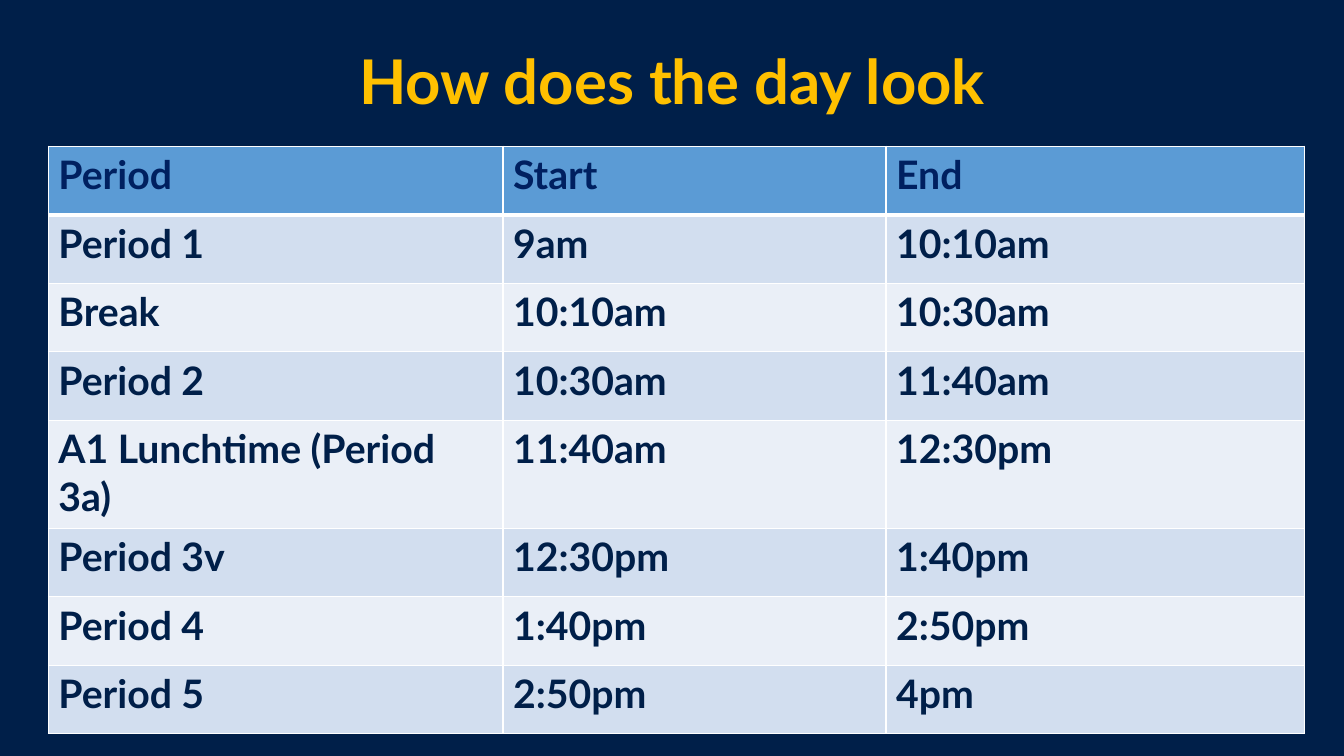
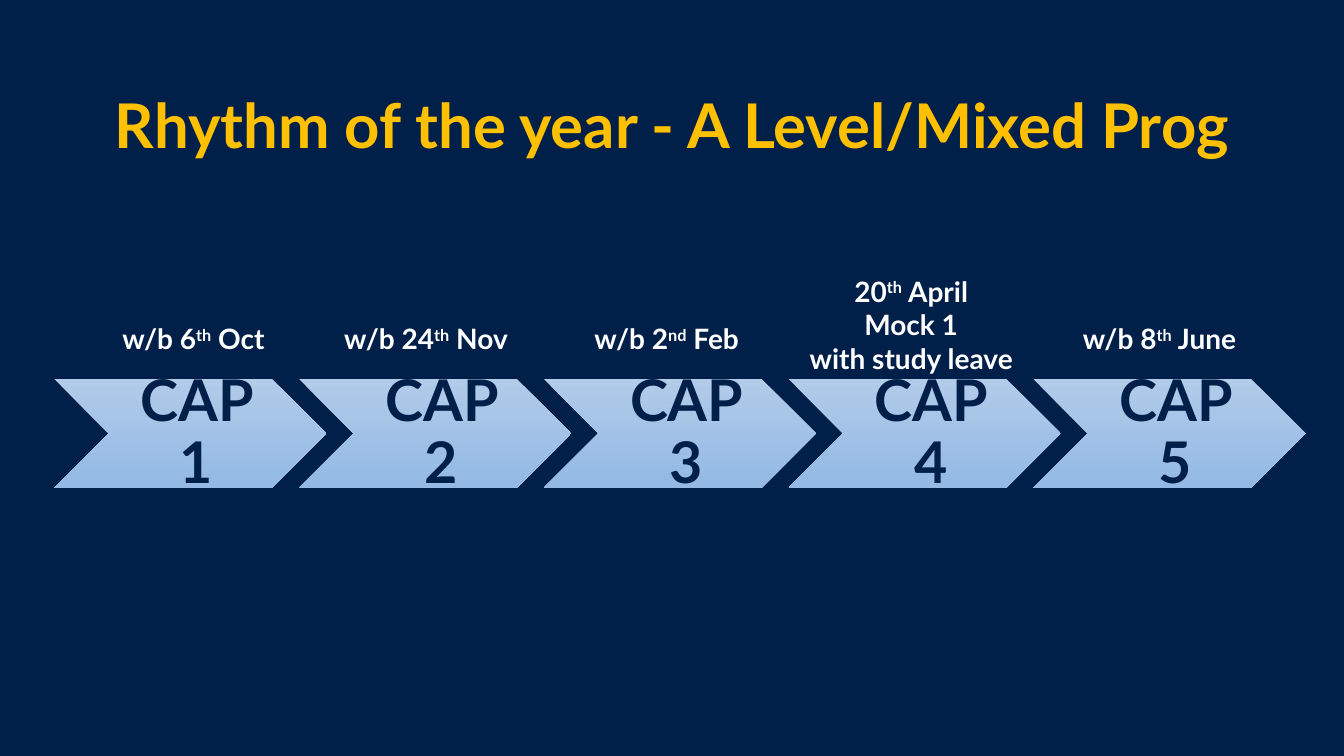
from dataclasses import dataclass
from typing import NamedTuple

from lxml.etree import SubElement
from pptx import Presentation
from pptx.dml.color import RGBColor
from pptx.enum.shapes import MSO_SHAPE
from pptx.enum.text import MSO_ANCHOR, PP_ALIGN
from pptx.oxml.ns import qn
from pptx.slide import Slide
from pptx.table import _Cell
from pptx.text.text import TextFrame, _Paragraph
from pptx.util import Inches, Length, Pt

WIDTH, HEIGHT = Inches(13.33), Inches(7.5)
FONT = "Lato"
NAVY = RGBColor(0x00, 0x1F, 0x49)
HEADER_TEXT = RGBColor(0x00, 0x20, 0x60)
GOLD = RGBColor(0xFF, 0xC0, 0x00)
WHITE = RGBColor(0xFF, 0xFF, 0xFF)
HEADER_BLUE = RGBColor(0x5B, 0x9B, 0xD5)
BANDS = (RGBColor(0xD2, 0xDE, 0xEF), RGBColor(0xEA, 0xEF, 0xF7))
CHEVRON_TOP = RGBColor(0xB1, 0xCB, 0xE9)
CHEVRON_BOTTOM = RGBColor(0x93, 0xB9, 0xE4)

TIMETABLE = (
    ("Period", "Start", "End"),
    ("Period 1", "9am", "10:10am"),
    ("Break", "10:10am", "10:30am"),
    ("Period 2", "10:30am", "11:40am"),
    ("A1 Lunchtime (Period 3a)", "11:40am", "12:30pm"),
    ("Period 3v", "12:30pm", "1:40pm"),
    ("Period 4", "1:40pm", "2:50pm"),
    ("Period 5", "2:50pm", "4pm"),
)
COLUMN_SHARES = (33.83, 28.5, 31.13)
ROW_SHARE, TALL_ROW_SHARE, TALL_ROW = 9.07, 14.27, 4


class Box(NamedTuple):
    """Left, top, width and height in percent of the slide."""

    left: float
    top: float
    width: float
    height: float

    def lengths(self) -> tuple[Length, Length, Length, Length]:
        return (across(self.left), down(self.top),
                across(self.width), down(self.height))


@dataclass(frozen=True)
class Milestone:
    name: str
    center: float
    day: str
    ordinal: str
    month: str
    details: tuple[str, ...] = ()


MILESTONES = (
    Milestone("CAP 1", 14.4, "w/b 6", "th", " Oct"),
    Milestone("CAP 2", 31.7, "w/b 24", "th", " Nov"),
    Milestone("CAP 3", 49.6, "w/b 2", "nd", " Feb"),
    Milestone("CAP 4", 67.8, "20", "th", " April", ("Mock 1", "with study leave")),
    Milestone("CAP 5", 86.27, "w/b 8", "th", " June"),
)
FIRST_CHEVRON = Box(4.05, 50.13, 20.25, 14.4)
CHEVRON_PITCH = 18.21
LABEL_WIDTH = 17.33


def across(percent: float) -> Length:
    return Length(round(WIDTH * percent / 100))


def down(percent: float) -> Length:
    return Length(round(HEIGHT * percent / 100))


def add_run(paragraph: _Paragraph, text: str, size: float, color: RGBColor,
            raised: bool = False) -> None:
    run = paragraph.add_run()
    run.text = text
    run.font.name = FONT
    run.font.size = Pt(size)
    run.font.bold = True
    run.font.color.rgb = color
    if raised:
        run.font._element.set("baseline", "30000")


def centered_paragraph(frame: TextFrame, first: bool = True) -> _Paragraph:
    paragraph = frame.paragraphs[0] if first else frame.add_paragraph()
    paragraph.alignment = PP_ALIGN.CENTER
    return paragraph


def add_text_frame(slide: Slide, box: Box) -> TextFrame:
    frame = slide.shapes.add_textbox(*box.lengths()).text_frame
    frame.word_wrap = True
    return frame


def add_titled_slide(presentation: Presentation, title: str, top: float,
                     height: float) -> Slide:
    slide = presentation.slides.add_slide(presentation.slide_layouts[6])
    slide.background.fill.solid()
    slide.background.fill.fore_color.rgb = NAVY
    frame = add_text_frame(slide, Box(6.9, top, 86.25, height))
    frame.vertical_anchor = MSO_ANCHOR.MIDDLE
    paragraph = centered_paragraph(frame)
    paragraph.line_spacing = 0.9
    add_run(paragraph, title, 44, GOLD)
    return slide


def set_borders(cell: _Cell, top: float, bottom: float) -> None:
    properties = cell._tc.get_or_add_tcPr()
    for side, points in (("L", 1), ("R", 1), ("T", top), ("B", bottom)):
        line = SubElement(properties, qn(f"a:ln{side}"), w=str(Pt(points)))
        fill = SubElement(line, qn("a:solidFill"))
        SubElement(fill, qn("a:srgbClr"), val=str(WHITE))


def add_timetable(slide: Slide) -> None:
    heights = [TALL_ROW_SHARE if row == TALL_ROW else ROW_SHARE
               for row in range(len(TIMETABLE))]
    box = Box(3.6, 19.33, sum(COLUMN_SHARES), sum(heights))
    table = slide.shapes.add_table(
        len(TIMETABLE), len(COLUMN_SHARES), *box.lengths()).table
    for column, share in zip(table.columns, COLUMN_SHARES):
        column.width = across(share)
    for index, (row, height, texts) in enumerate(
            zip(table.rows, heights, TIMETABLE)):
        row.height = down(height)
        header = index == 0
        for cell, text in zip(row.cells, texts):
            set_borders(cell, 3 if index == 1 else 1, 3 if header else 1)
            cell.fill.solid()
            cell.fill.fore_color.rgb = (
                HEADER_BLUE if header else BANDS[(index - 1) % 2])
            add_run(cell.text_frame.paragraphs[0], text, 28,
                    HEADER_TEXT if header else NAVY)


def add_chevron(slide: Slide, name: str, box: Box) -> None:
    chevron = slide.shapes.add_shape(MSO_SHAPE.CHEVRON, *box.lengths())
    chevron.shadow.inherit = False
    chevron.line.fill.background()
    chevron.fill.gradient()
    chevron.fill.gradient_angle = 270
    for stop, color in zip(chevron.fill.gradient_stops,
                           (CHEVRON_TOP, CHEVRON_BOTTOM)):
        stop.color.rgb = color
    first, last = chevron.fill.gradient_stops
    first.position, last.position = 0, 1
    frame = chevron.text_frame
    frame.word_wrap = True
    frame.vertical_anchor = MSO_ANCHOR.MIDDLE
    frame.margin_left = Inches(0.18)
    frame.margin_top = frame.margin_right = frame.margin_bottom = Inches(0.06)
    paragraph = centered_paragraph(frame)
    paragraph.line_spacing = 0.9
    add_run(paragraph, name, 41, NAVY)


def add_date_label(slide: Slide, milestone: Milestone) -> None:
    top, height = (35.6, 14.8) if milestone.details else (41.87, 5.87)
    left = milestone.center - LABEL_WIDTH / 2
    frame = add_text_frame(slide, Box(left, top, LABEL_WIDTH, height))
    paragraph = centered_paragraph(frame)
    add_run(paragraph, milestone.day, 20, WHITE)
    add_run(paragraph, milestone.ordinal, 20, WHITE, raised=True)
    add_run(paragraph, milestone.month, 20, WHITE)
    for detail in milestone.details:
        add_run(centered_paragraph(frame, first=False), detail, 20, WHITE)


def add_year_rhythm(slide: Slide) -> None:
    for index, milestone in enumerate(MILESTONES):
        left = FIRST_CHEVRON.left + index * CHEVRON_PITCH
        add_chevron(slide, milestone.name, FIRST_CHEVRON._replace(left=left))
        add_date_label(slide, milestone)


def main() -> None:
    presentation = Presentation()
    presentation.slide_width, presentation.slide_height = WIDTH, HEIGHT
    add_timetable(add_titled_slide(
        presentation, "How does the day look", 3.33, 15.73))
    add_year_rhythm(add_titled_slide(
        presentation, "Rhythm of the year - A Level/Mixed Prog", 5.33, 23.47))
    presentation.save("out.pptx")


if __name__ == "__main__":
    main()
